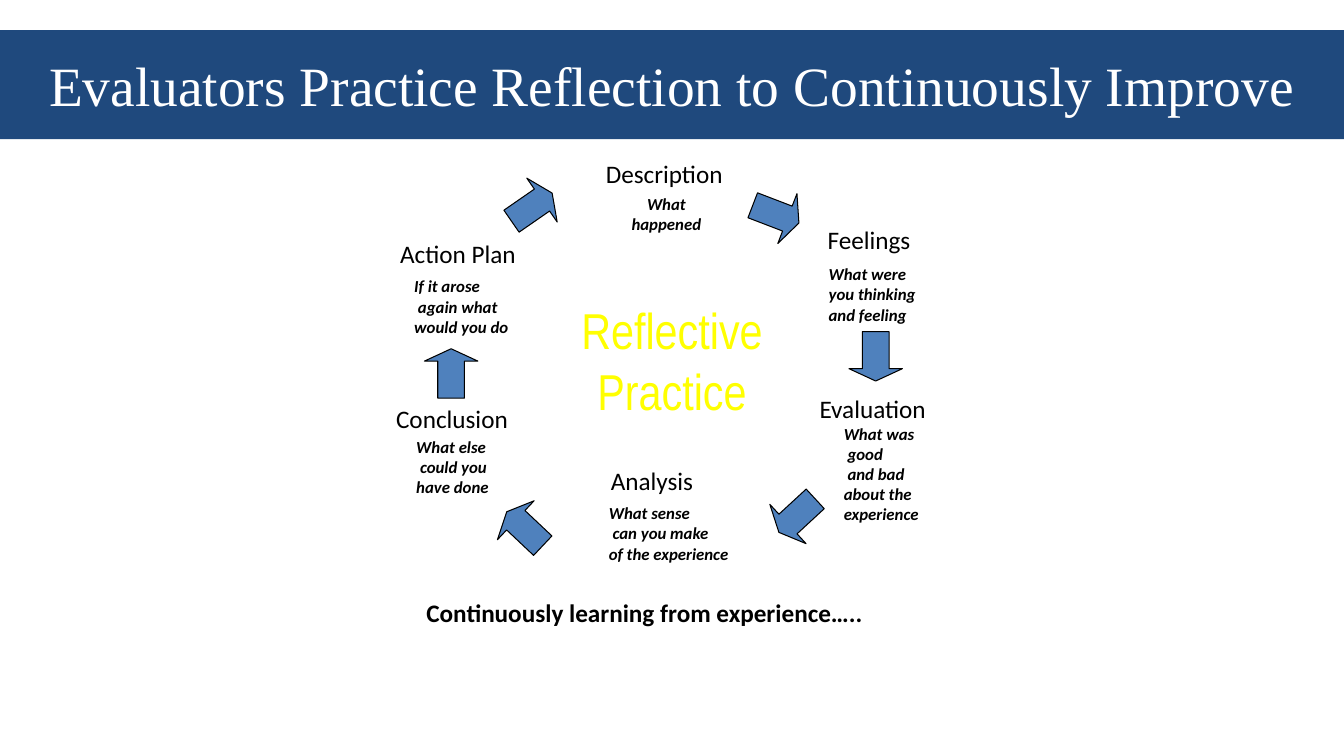
import dataclasses

import pptx
import pptx.dml.color
import pptx.enum.shapes
import pptx.enum.text
import pptx.util

PX = 9144  # EMU in one px, at 100 px to the inch
SLIDE_WIDTH, SLIDE_HEIGHT = 1333, 750
TITLE_ONLY_LAYOUT = 5
ARROW_WIDTH, ARROW_HEIGHT = 53, 49

ALIGN = pptx.enum.text.PP_ALIGN
ANCHOR = pptx.enum.text.MSO_ANCHOR
AUTO_SIZE = pptx.enum.text.MSO_AUTO_SIZE


@dataclasses.dataclass(frozen=True)
class Theme:
    banner: str = "1F497D"
    arrow: str = "4F81BD"
    ink: str = "000000"
    title_ink: str = "FFFFFF"
    center_ink: str = "FFFF00"
    body_font: str = "Calibri"
    title_font: str = "Times New Roman"
    center_font: str = "Arial Narrow"
    title_size: float = 39.6
    center_size: float = 36
    label_size: float = 18
    question_size: float = 12


THEME = Theme()


@dataclasses.dataclass(frozen=True)
class Stage:
    """One step of the cycle; boxes are (left, top, width, height)."""
    name: str
    name_box: tuple
    question: tuple
    question_box: tuple
    arrow_at: tuple
    arrow_rotation: float
    question_align: ALIGN = ALIGN.LEFT
    question_wrap: bool = False


STAGES = (
    Stage("Description", (591, 152, 138, 40),
          ("What", "happened"), (616, 187, 90, 50),
          (743, 188), 111, question_align=ALIGN.CENTER),
    Stage("Feelings", (811, 218, 103, 40),
          ("What were", "you thinking", "and feeling"), (812, 257, 131, 71),
          (842, 329), 180, question_wrap=True),
    Stage("Evaluation", (803, 385, 127, 40),
          ("What was", " good", " and bad", "about the", "experience"),
          (827, 415, 95, 111), (764, 487), 227.3),
    Stage("Analysis", (596, 457, 103, 40),
          ("What sense", " can you make", "of the experience"),
          (594, 494, 140, 71), (494, 500), 313.3),
    Stage("Conclusion", (383, 395, 132, 40),
          ("What else", " could you", "have done"), (403, 428, 95, 71),
          (421, 346), 0),
    Stage("Action Plan", (387, 232, 136, 40),
          ("If it arose", " again what", "would you do"),
          (401, 269, 115, 71), (501, 181), 55.3),
)


def px(*lengths):
    return [pptx.util.Emu(length * PX) for length in lengths]


def rgb(color):
    return pptx.dml.color.RGBColor.from_string(color)


def write_text(frame, *lines, size, font=THEME.body_font, color=THEME.ink,
               bold=False, italic=False, align=ALIGN.LEFT, anchor=ANCHOR.TOP,
               wrap=False, auto_size=AUTO_SIZE.SHAPE_TO_FIT_TEXT):
    """Fill a text frame with one paragraph for each line."""
    frame.word_wrap = wrap
    frame.auto_size = auto_size
    frame.vertical_anchor = anchor
    for index, line in enumerate(lines):
        paragraph = frame.add_paragraph() if index else frame.paragraphs[0]
        paragraph.alignment = align
        run = paragraph.add_run()
        run.text = line
        run.font.name = font
        run.font.size = pptx.util.Pt(size)
        run.font.bold = bold
        run.font.italic = italic
        run.font.color.rgb = rgb(color)


def add_text(slide, box, *lines, **text_format):
    text_box = slide.shapes.add_textbox(*px(*box))
    write_text(text_box.text_frame, *lines, **text_format)


def add_title_banner(slide, text):
    title = slide.shapes.title
    title.left, title.top, title.width, title.height = px(
        0, 30, SLIDE_WIDTH, 108)
    title.fill.solid()
    title.fill.fore_color.rgb = rgb(THEME.banner)
    write_text(title.text_frame, text, size=THEME.title_size,
               font=THEME.title_font, color=THEME.title_ink,
               align=ALIGN.CENTER, anchor=ANCHOR.MIDDLE, wrap=True,
               auto_size=AUTO_SIZE.NONE)


def add_arrow(slide, position, rotation):
    arrow = slide.shapes.add_shape(
        pptx.enum.shapes.MSO_SHAPE.UP_ARROW,
        *px(*position, ARROW_WIDTH, ARROW_HEIGHT))
    arrow.adjustments[0] = 0.5
    arrow.adjustments[1] = 0.25
    arrow.rotation = rotation
    arrow.shadow.inherit = False
    arrow.fill.solid()
    arrow.fill.fore_color.rgb = rgb(THEME.arrow)
    arrow.line.color.rgb = rgb(THEME.ink)
    arrow.line.width = pptx.util.Pt(0.75)


def add_stage(slide, stage):
    add_text(slide, stage.name_box, stage.name, size=THEME.label_size)
    add_text(slide, stage.question_box, *stage.question,
             size=THEME.question_size, bold=True, italic=True,
             align=stage.question_align, wrap=stage.question_wrap)
    add_arrow(slide, stage.arrow_at, stage.arrow_rotation)


def main():
    presentation = pptx.Presentation()
    presentation.slide_width, presentation.slide_height = px(
        SLIDE_WIDTH, SLIDE_HEIGHT)
    slide = presentation.slides.add_slide(
        presentation.slide_layouts[TITLE_ONLY_LAYOUT])

    add_title_banner(
        slide, "Evaluators Practice Reflection to Continuously Improve")
    for stage in STAGES:
        add_stage(slide, stage)
    add_text(slide, (562, 292, 209, 125), "Reflective", "Practice",
             size=THEME.center_size, font=THEME.center_font,
             color=THEME.center_ink, align=ALIGN.CENTER,
             auto_size=AUTO_SIZE.NONE)
    add_text(slide, (413, 588, 462, 40),
             "Continuously learning from experience…..",
             size=THEME.label_size, bold=True)

    presentation.save("out.pptx")


if __name__ == "__main__":
    main()
